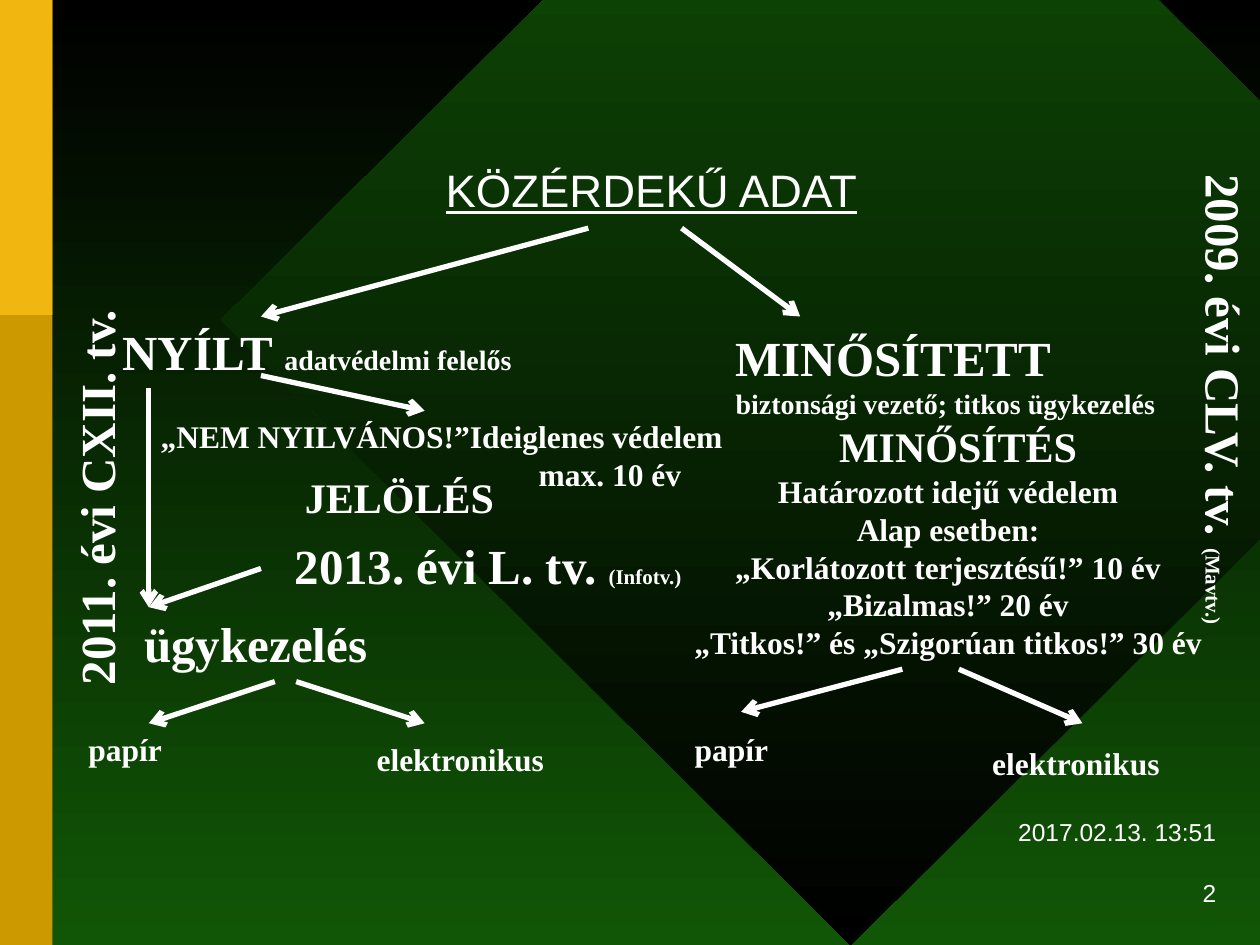
from pptx import Presentation
from pptx.dml.color import RGBColor
from pptx.enum.shapes import MSO_CONNECTOR, MSO_SHAPE
from pptx.enum.text import MSO_ANCHOR, MSO_AUTO_SIZE, PP_ALIGN
from pptx.oxml.ns import qn
from pptx.util import Cm, Pt
from lxml.etree import SubElement

COLORS = {"white": "FFFFFF", "black": "000000", "green": "115606",
          "ochre": "CC9900", "yellow": "F1B60F"}
LEFT, CENTER, RIGHT = PP_ALIGN.LEFT, PP_ALIGN.CENTER, PP_ALIGN.RIGHT


def set_gradient(fill, names):
    fill.gradient()
    fill.gradient_angle = 270
    for stop, name in zip(fill.gradient_stops, names):
        stop.color.rgb = RGBColor.from_string(COLORS[name])


def format_span(span, size, font, bold):
    span.font.size = Pt(size)
    span.font.name = font
    span.font.bold = bold
    span.font.color.rgb = RGBColor.from_string(COLORS["white"])


deck = Presentation()
deck.slide_width, deck.slide_height = Cm(25.4), Cm(19.05)
page = deck.slides.add_slide(deck.slide_layouts[5])
set_gradient(page.background.fill, ("black", "green"))

decorations = [
    (MSO_SHAPE.DIAMOND, 4.45, -6.15, 25.4, 25.2, None),
    (MSO_SHAPE.RECTANGLE, 0, 0, 1.06, 19.05, "ochre"),
    (MSO_SHAPE.RECTANGLE, 0, 0, 1.06, 6.35, "yellow"),
]
for kind, left, top, width, height, color in decorations:
    shape = page.shapes.add_shape(kind, Cm(left), Cm(top), Cm(width), Cm(height))
    shape.shadow.inherit = False
    shape.line.fill.background()
    if color:
        shape.fill.solid()
        shape.fill.fore_color.rgb = RGBColor.from_string(COLORS[color])
    else:
        set_gradient(shape.fill, ("green", "black"))

title = page.shapes.title
page.shapes._spTree.append(title._element)
title.left, title.top, title.width, title.height = Cm(0.88), Cm(2.92), Cm(24.51), Cm(15.8)
title.text_frame.text = "KÖZÉRDEKŰ ADAT"
title.text_frame.vertical_anchor = MSO_ANCHOR.TOP
title.text_frame.auto_size = MSO_AUTO_SIZE.NONE
heading = title.text_frame.paragraphs[0]
heading.alignment = CENTER
heading.line_spacing = 1.2
format_span(heading.runs[0], 26, "Arial", False)
heading.runs[0].font.underline = True

footers = [("2017.02.13. 13:51", 16.35), ("2", 17.57)]
for words, top in footers:
    box = page.shapes.add_textbox(Cm(18.42), Cm(top), Cm(6.35), Cm(0.84))
    box.text_frame.word_wrap = True
    box.text_frame.vertical_anchor = MSO_ANCHOR.MIDDLE
    box.text_frame.text = words
    para = box.text_frame.paragraphs[0]
    para.alignment = RIGHT
    format_span(para.runs[0], 14, "Arial", False)

arrows = [
    (13.74, 4.6, 16.13, 6.38), (11.86, 4.6, 5.26, 6.38),
    (3, 7.82, 3, 12.24), (5.26, 7.57, 8.56, 8.28), (5.26, 11.46, 3, 12.24),
    (18.19, 13.49, 14.94, 14.35), (19.33, 13.49, 21.82, 14.58),
    (5.54, 13.74, 3, 14.58), (5.97, 13.74, 8.56, 14.58),
]
for ends in arrows:
    arrow = page.shapes.add_connector(MSO_CONNECTOR.STRAIGHT, *[Cm(end) for end in ends])
    arrow.line.width = Pt(3)
    arrow.line.color.rgb = RGBColor.from_string(COLORS["white"])
    SubElement(arrow.line._get_or_add_ln(), qn("a:tailEnd"), type="arrow")
    SubElement(arrow._element.spPr, qn("a:effectLst"))

labels = [
    (2.22, 6.36, 11.89, 1.45, 0, LEFT, [[("NYÍLT ", 28), ("adatvédelmi felelős", 16)]]),
    (14.58, 6.48, 11.28, 2.13, 0, LEFT,
     [[("MINŐSÍTETT", 28)], [("biztonsági vezető; titkos ügykezelés", 16)]]),
    (2.99, 8.28, 12.67, 1.8, 0, LEFT,
     [[("„NEM NYILVÁNOS!”Ideiglenes védelem", 18)], [("max. 10 év", 18)]]),
    (4.45, 9.38, 7.21, 1.3, 0, CENTER, [[("JELÖLÉS", 24)]]),
    (14.58, 8.35, 9.47, 1.3, 0, CENTER, [[("MINŐSÍTÉS", 24)]]),
    (13.16, 9.39, 11.91, 4.09, 0, CENTER,
     [[("Határozott idejű védelem", 18)], [("Alap esetben:", 18)],
      [("„Korlátozott terjesztésű!” 10 év", 18)], [("„Bizalmas!” 20 év", 18)],
      [("„Titkos!” és „Szigorúan titkos!” 30 év", 18)]]),
    (-2.79, 8.61, 9.45, 1.45, 270, LEFT, [[("2011. évi CXII. tv.", 28)]]),
    (5.69, 10.67, 8.43, 1.45, 0, LEFT, [[("2013. évi L. tv. ", 28), ("(Infotv.)", 12)]]),
    (19.84, 7.39, 9.7, 1.45, 90, LEFT, [[("2009. évi CLV. tv. ", 28), ("(Mavtv.)", 12)]]),
    (2.66, 12.24, 5.51, 1.45, 0, LEFT, [[("ügykezelés", 28)]]),
    (11.86, 14.6, 5.77, 1.02, 0, CENTER, [[("papír", 18)]]),
    (19.33, 14.88, 4.72, 1.02, 0, CENTER, [[("elektronikus", 18)]]),
    (-0.36, 14.6, 5.77, 1.02, 0, CENTER, [[("papír", 18)]]),
    (6.92, 14.8, 4.72, 1.02, 0, CENTER, [[("elektronikus", 18)]]),
]
for left, top, width, height, rotation, alignment, lines in labels:
    box = page.shapes.add_textbox(Cm(left), Cm(top), Cm(width), Cm(height))
    box.rotation = rotation
    frame = box.text_frame
    frame.word_wrap = True
    for index, line in enumerate(lines):
        para = frame.add_paragraph() if index else frame.paragraphs[0]
        para.alignment = alignment
        for words, size in line:
            span = para.add_run()
            span.text = words
            format_span(span, size, "Times New Roman", True)
            if words == "max. 10 év":
                para._p.get_or_add_pPr().set("marL", str(Cm(7.62)))

deck.save("out.pptx")
